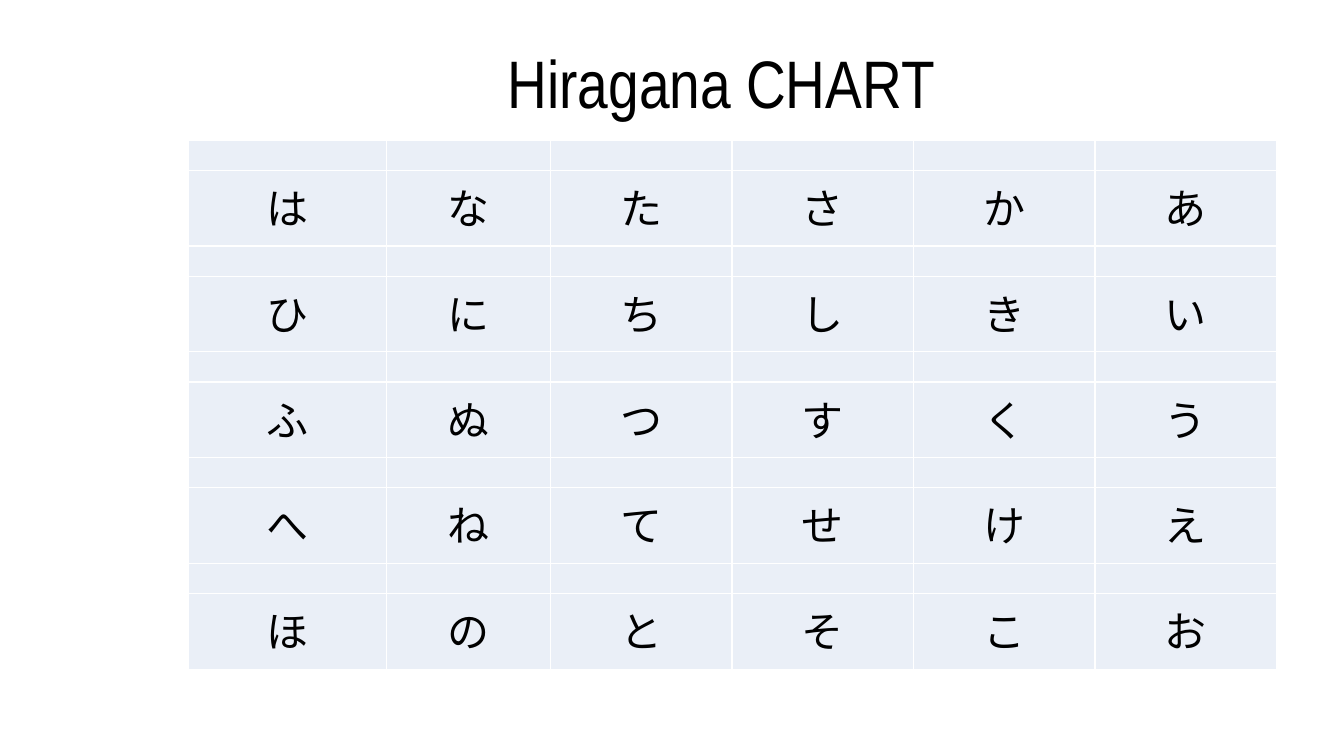
from lxml.etree import SubElement
from pptx import Presentation
from pptx.dml.color import RGBColor
from pptx.enum.text import MSO_ANCHOR, MSO_AUTO_SIZE, PP_ALIGN
from pptx.oxml.ns import qn
from pptx.util import Inches, Pt

# Content
TITLE = "Hiragana CHART"
KANA_ROWS = ["はなたさかあ", "ひにちしきい", "ふぬつすくう", "へねてせけえ", "ほのとそこお"]
COL_WIDTHS = [1.96, 1.63, 1.8, 1.8, 1.8, 1.8]
GAP_HEIGHT, KANA_HEIGHT = 0.3, 0.75
COLORS = {"text": "000000", "cell": "EAEFF7", "border": "FFFFFF"}
NO_STYLE = "{2D5ABB26-0587-4C30-8999-92F81FD0307C}"


def add_run(p, text, size, font):
    r = p.add_run()
    r.text = text
    r.font.size = Pt(size)
    r.font.name = font
    r.font.bold = False
    r.font.color.rgb = RGBColor.from_string(COLORS["text"])
    return r


def style_cell(cell):
    cell.margin_left = cell.margin_right = Inches(0.07)
    cell.margin_top = cell.margin_bottom = 0
    cell.vertical_anchor = MSO_ANCHOR.MIDDLE
    # Borders go before the fill in the cell properties
    tcPr = cell._tc.get_or_add_tcPr()
    for side in ("a:lnL", "a:lnR", "a:lnT", "a:lnB"):
        ln = SubElement(tcPr, qn(side), w=str(Pt(1)))
        fill = SubElement(ln, qn("a:solidFill"))
        SubElement(fill, qn("a:srgbClr"), val=COLORS["border"])
    cell.fill.solid()
    cell.fill.fore_color.rgb = RGBColor.from_string(COLORS["cell"])


prs = Presentation()
prs.slide_width, prs.slide_height = Inches(13.33), Inches(7.5)
s = prs.slides.add_slide(prs.slide_layouts[5])

# Title
title = s.shapes.title
title.left, title.top = Inches(2.41), Inches(0.36)
title.width, title.height = Inches(9.49), Inches(0.76)
tf = title.text_frame
tf.word_wrap = True
tf.auto_size = MSO_AUTO_SIZE.NONE
tf.vertical_anchor = MSO_ANCHOR.TOP
p = tf.paragraphs[0]
p.alignment = PP_ALIGN.CENTER
add_run(p, TITLE, 48, "Arial Narrow")

# Kana table: a thin empty row above each row of kana
row_heights = [GAP_HEIGHT, KANA_HEIGHT] * len(KANA_ROWS)
table = s.shapes.add_table(
    len(row_heights), len(COL_WIDTHS), Inches(1.87), Inches(1.39),
    Inches(sum(COL_WIDTHS)), Inches(sum(row_heights))).table
table.first_row = table.horz_banding = False
table._tbl.tblPr.find(qn("a:tableStyleId")).text = NO_STYLE
for col, width in zip(table.columns, COL_WIDTHS):
    col.width = Inches(width)

for i, height in enumerate(row_heights):
    table.rows[i].height = Inches(height)
    for j, kana in enumerate(KANA_ROWS[i // 2]):
        cell = table.cell(i, j)
        style_cell(cell)
        p = cell.text_frame.paragraphs[0]
        if i % 2:
            p.alignment = PP_ALIGN.CENTER
            p.line_spacing = 1.07
            p.space_after = Pt(8)
            r = add_run(p, kana, 30, "Calibri")
            SubElement(r.font._element, qn("a:ea"), typeface="Calibri")
        else:
            # Small type keeps the empty row thin
            SubElement(p._p, qn("a:endParaRPr"), sz="1100")

prs.save("out.pptx")
